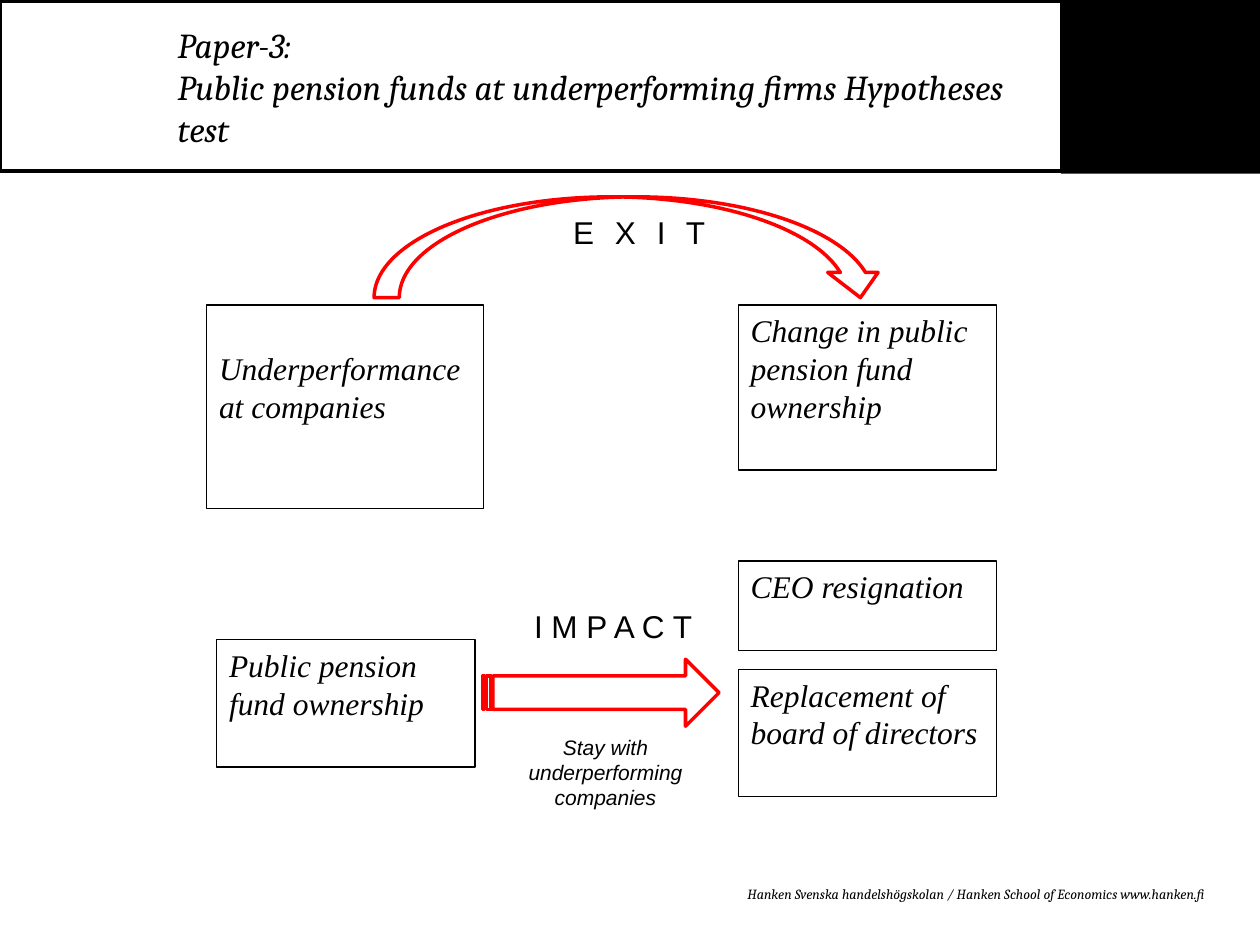
from pptx import Presentation
from pptx.dml.color import RGBColor
from pptx.enum.shapes import MSO_SHAPE as Kind
from pptx.enum.text import MSO_ANCHOR as Anchor, MSO_AUTO_SIZE as Fit, PP_ALIGN as Align
from pptx.util import Pt

BLACK, RED = "000000", "FF0000"
SERIF, SANS, HEAD = "Times New Roman", "Arial", "Cambria"
TITLE = "Paper-3:\vPublic pension funds at underperforming firms Hypotheses test"
RIGHT, WIDE = 421.9, 147.6
BOXES = [
    ("Underperformance at companies", (118.1, 174.3, 158.4, 116.4), 25.3),
    ("Change in public pension fund ownership", (RIGHT, 174.3, WIDE, 94.3), 3.6),
    ("Public pension fund ownership", (123.8, 365.5, WIDE, 72.8), 3.6),
    ("CEO resignation", (RIGHT, 320.6, WIDE, 51), 3.6),
    ("Replacement of board of directors", (RIGHT, 382.5, WIDE, 72.8), 3.6),
]
ARROWS = [
    (Kind.CURVED_DOWN_ARROW, (213.8, 112.5, 292.3, 57.6)),
    (Kind.STRIPED_RIGHT_ARROW, (275.7, 376.7, 135.2, 38.3)),
]
LABELS = [
    ("E X I T", (320.4, 118.1, 90, 28.8), dict(wrap=False, gap=3.5)),
    ("I M P A C T", (298.1, 343.4, 105.8, 51.1), {}),
    ("Stay with underperforming companies", (275.8, 416.2, 140.4, 51.1),
     dict(size=12, italic=True, align=Align.CENTER)),
    ("Hanken Svenska handelshögskolan / Hanken School of Economics www.hanken.fi",
     (360, 502.6, 336, 17.3),
     dict(size=8, font=HEAD, italic=True, align=Align.RIGHT)),
]


def color(code):
    return RGBColor.from_string(code)


def place(spot):
    return [Pt(n) for n in spot]


def write(frame, text, size=18, font=SANS, italic=False, align=Align.LEFT,
          anchor=Anchor.TOP, wrap=True, gap=0):
    frame.auto_size = Fit.NONE
    frame.word_wrap = wrap
    frame.vertical_anchor = anchor
    para = frame.paragraphs[0]
    para.text = text
    para.alignment = align
    for run in para.runs:
        face = run.font
        face.size, face.name, face.italic = Pt(size), font, italic
        face.color.rgb = color(BLACK)
        if gap:
            run._r.get_or_add_rPr().set("spc", str(int(gap * 100)))


def draw(slide, kind, spot, line=BLACK, width=0.75, fill=None):
    shape = slide.shapes.add_shape(kind, *place(spot))
    shape.shadow.inherit = False
    if fill:
        shape.fill.solid()
        shape.fill.fore_color.rgb = color(fill)
    else:
        shape.fill.background()
    if line:
        shape.line.color.rgb = color(line)
        shape.line.width = Pt(width)
    else:
        shape.line.fill.background()
    return shape


def main():
    """Build the hypotheses slide and save it."""
    deck = Presentation()
    deck.slide_width, deck.slide_height = Pt(720), Pt(540)
    slide = deck.slides.add_slide(deck.slide_layouts[5])

    draw(slide, Kind.RECTANGLE, (0, 0.7, 607, 97.2), width=2.25)
    draw(slide, Kind.RECTANGLE, (606.2, 0, 113.8, 99.2), line=None, fill=BLACK)

    title = slide.shapes.title
    title.left, title.top, title.width, title.height = place((101.5, 4.3, 478.1, 90))
    frame = title.text_frame
    frame.margin_left = frame.margin_right = frame.margin_top = frame.margin_bottom = 0
    write(frame, TITLE, size=20, font=HEAD, italic=True, anchor=Anchor.MIDDLE)

    for text, spot, top in BOXES:
        frame = draw(slide, Kind.RECTANGLE, spot).text_frame
        frame.margin_top = Pt(top)
        write(frame, text, font=SERIF, italic=True)
    for kind, spot in ARROWS:
        draw(slide, kind, spot, line=RED, width=2)
    for text, spot, style in LABELS:
        write(slide.shapes.add_textbox(*place(spot)).text_frame, text, **style)

    deck.save("out.pptx")


if __name__ == "__main__":
    main()
